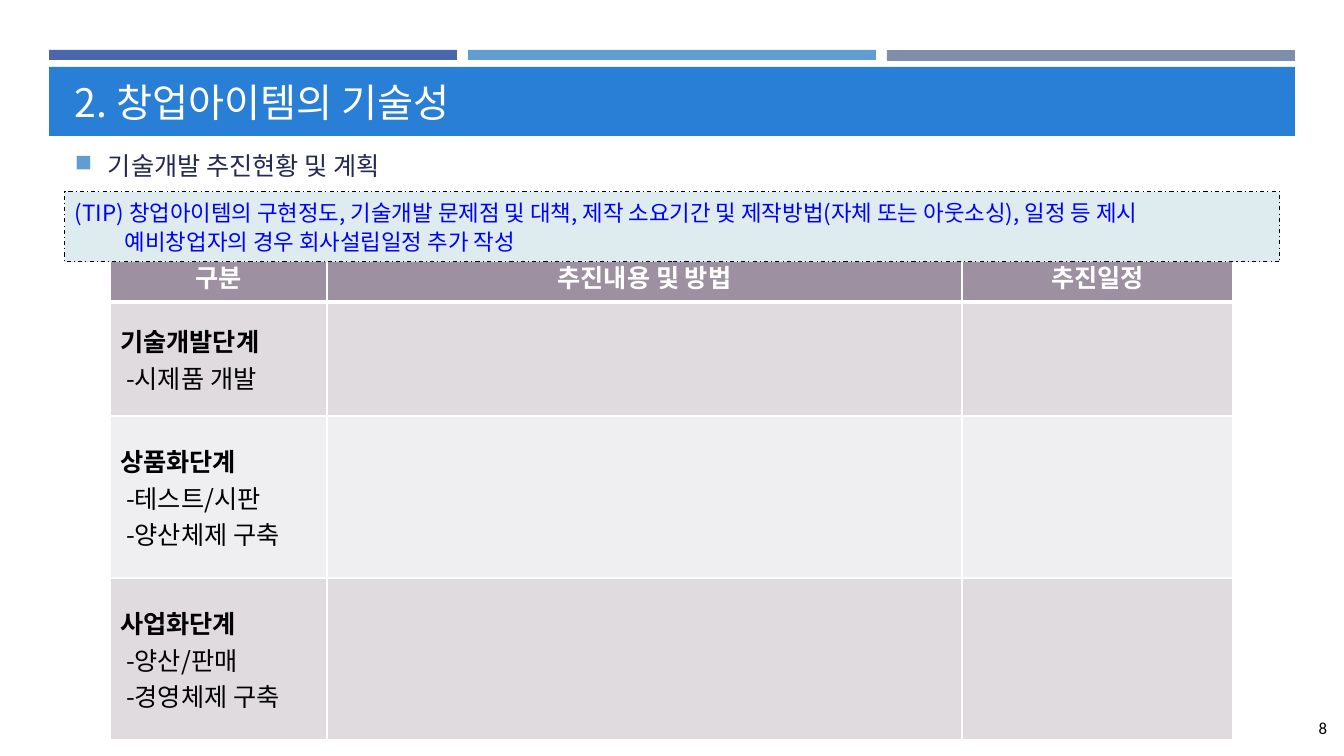
from lxml import etree
from pptx import Presentation
from pptx import util as u
from pptx.dml.color import RGBColor
from pptx.enum import dml, shapes, text
from pptx.oxml.ns import qn

PX = 914400 / 100.8
HUE = dict(navy="4A66AC", sky="629DD1", slate="7F8FA9", band="297FD5", ink="242852",
           white="FFFFFF", black="000000", tip="DEECEF", blue="0000FF",
           head="9D90A0", dark="DFDBDF", light="EFEEF0")
KOR = "Noto Sans CJK KR"
ALIGN = text.PP_ALIGN
MID = text.MSO_ANCHOR.MIDDLE


def px(*vals):
    """Turn px lengths into EMU."""
    return [u.Emu(round(v * PX)) for v in vals]


def write(frame, line, size=18, font=KOR, color="black", bold=False, align=ALIGN.LEFT,
          left=0, hang=0, before=0, after=0, lead=None):
    """Fill the empty first paragraph, or add one, and format it."""
    para = frame.paragraphs[0]
    if para.runs:
        para = frame.add_paragraph()
    para.alignment, para.line_spacing = align, lead
    para.space_before, para.space_after = u.Pt(before), u.Pt(after)
    margin, indent = px(left, hang)
    para._p.get_or_add_pPr().set("marL", str(margin))
    para._p.get_or_add_pPr().set("indent", str(indent))
    run = para.add_run()
    run.text = line
    run.font.size, run.font.name, run.font.bold = u.Pt(size), font, bold
    run.font.color.rgb = RGBColor.from_string(HUE[color])
    etree.SubElement(run.font._element, qn("a:ea"), typeface=font)
    return para


deck = Presentation()
deck.slide_width, deck.slide_height = px(1344, 756)
slide = deck.slides.add_slide(deck.slide_layouts[6])

# Top strips and title band
rects = {}
for name, box in (("navy", (49, 50, 408, 10)), ("sky", (468, 50, 408, 10)),
                  ("slate", (887, 50, 408, 11)), ("band", (49, 67, 1246, 69)),
                  ("tip", (65, 192, 1215, 70))):
    rect = slide.shapes.add_shape(shapes.MSO_SHAPE.RECTANGLE, *px(*box))
    rect.shadow.inherit = False
    rect.fill.solid()
    rect.fill.fore_color.rgb = RGBColor.from_string(HUE[name])
    rect.line.fill.background()
    rects[name] = rect

# Title, bullet and page number
frames = []
for box in ((65, 72, 1215, 60), (65, 140, 1215, 51), (1222, 708, 115, 40)):
    frame = slide.shapes.add_textbox(*px(*box)).text_frame
    frame.word_wrap, frame.vertical_anchor = True, MID
    frames.append(frame)
title, topic, page = frames
write(title, "2. 창업아이템의 기술성", size=28, color="white")
item = write(topic, "기술개발 추진현황 및 계획", color="ink", left=33, hang=-33)
props = item._p.get_or_add_pPr()
tint = etree.SubElement(props, qn("a:buClr"))
etree.SubElement(tint, qn("a:srgbClr"), val=HUE["sky"])
etree.SubElement(props, qn("a:buSzPct"), val="92000")
etree.SubElement(props, qn("a:buChar"), char="■")
write(page, "8", size=12, font="Calibri", align=ALIGN.RIGHT)

# Plan table
stages = [("기술개발단계", "시제품 개발"),
          ("상품화단계", "테스트/시판", "양산체제 구축"),
          ("사업화단계", "양산/판매", "경영체제 구축")]
heads = ["구분", "추진내용 및 방법", "추진일정"]
wide, tall = (217, 635, 271), (51, 114, 162, 162)
grid = slide.shapes.add_table(len(tall), len(wide),
                              *px(110, 251, sum(wide), sum(tall))).table
grid.first_row = grid.horz_banding = False
for col, size in zip(grid.columns, px(*wide)):
    col.width = size
for row, size in zip(grid.rows, px(*tall)):
    row.height = size

for r, row in enumerate(grid.rows):
    for c, cell in enumerate(row.cells):
        cell.vertical_anchor = MID
        cell.fill.solid()
        tone = "head" if r == 0 else ("dark" if r % 2 else "light")
        cell.fill.fore_color.rgb = RGBColor.from_string(HUE[tone])
        if r == 0:
            write(cell.text_frame, heads[c], color="white", bold=True, align=ALIGN.CENTER)
        elif c == 0:
            stage, *steps = stages[r - 1]
            write(cell.text_frame, stage, bold=True)
            for step in steps:
                write(cell.text_frame, "-" + step, left=6)
        for n, side in enumerate(("lnL", "lnR", "lnT", "lnB")):
            thick = (r, side) in ((0, "lnB"), (1, "lnT"))
            edge = etree.Element(qn("a:" + side), w=str(u.Pt(3 if thick else 1)))
            paint = etree.SubElement(edge, qn("a:solidFill"))
            etree.SubElement(paint, qn("a:srgbClr"), val=HUE["white"])
            cell._tc.get_or_add_tcPr().insert(n, edge)

# Tip box lies over the top of the table
tip = rects["tip"]
slide.shapes._spTree.append(tip._element)
tip.line.color.rgb = RGBColor.from_string(HUE["black"])
tip.line.width = u.Pt(0.75)
tip.line.dash_style = dml.MSO_LINE.DASH_DOT
tip.text_frame.word_wrap, tip.text_frame.vertical_anchor = True, MID
look = dict(size=16, color="blue", before=1, after=6)
write(tip.text_frame, "(TIP) 창업아이템의 구현정도, 기술개발 문제점 및 대책, "
      "제작 소요기간 및 제작방법(자체 또는 아웃소싱), 일정 등 제시", **look)
write(tip.text_frame, "예비창업자의 경우 회사설립일정 추가 작성", left=50, lead=0.7, **look)

deck.save("out.pptx")
